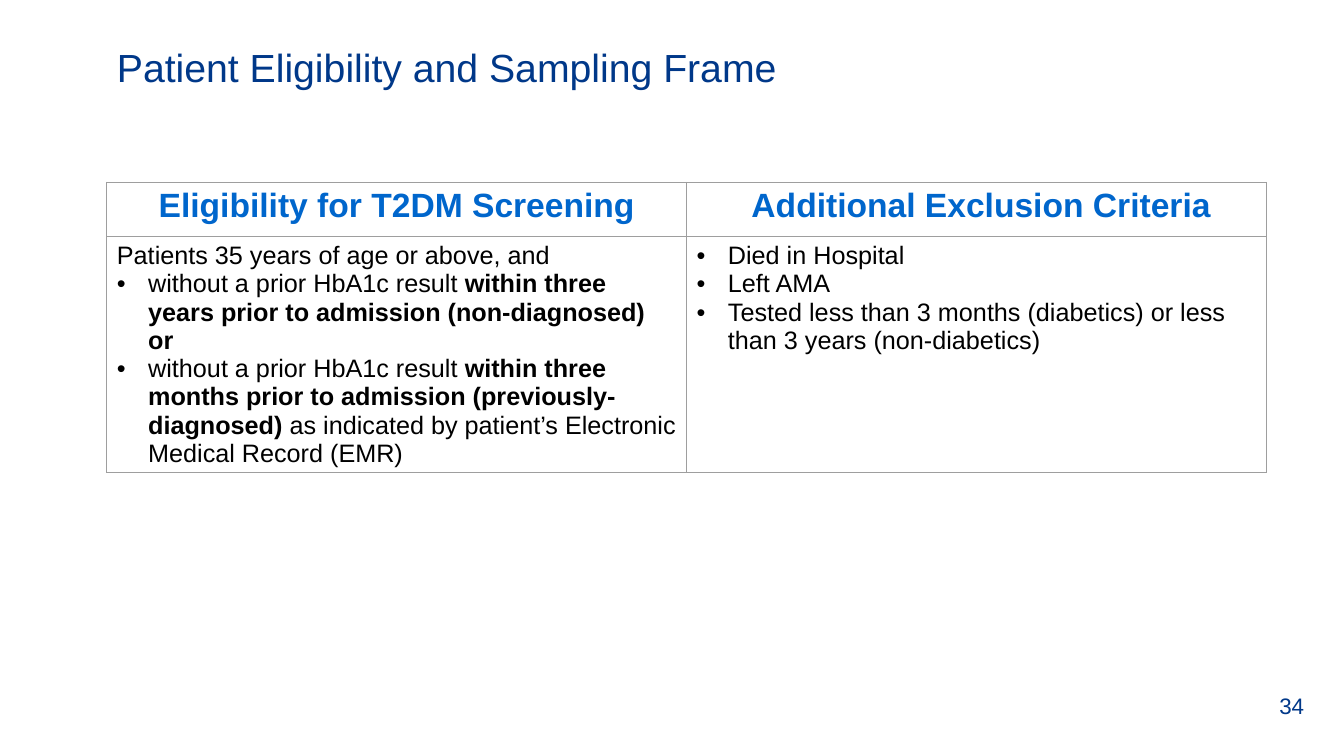
from dataclasses import dataclass

from lxml import etree
from pptx import Presentation
from pptx.dml.color import RGBColor
from pptx.enum import text as t
from pptx.oxml import ns
from pptx.util import Inches, Pt


@dataclass(frozen=True)
class Theme:
    font: str = "Arial"
    navy: str = "003889"
    blue: str = "0066CC"
    black: str = "000000"
    border: str = "9E9E9E"
    title: int = 28
    header: int = 24
    body: int = 18
    number: int = 16


theme = Theme()


def write(frame, paragraphs, *, size, color, align=t.PP_ALIGN.LEFT,
          anchor=t.MSO_ANCHOR.TOP):
    """Each paragraph is (bulleted, [(words, bold), ...])."""
    frame.word_wrap = True
    frame.vertical_anchor = anchor
    for index, (bulleted, runs) in enumerate(paragraphs):
        paragraph = frame.paragraphs[0] if index == 0 else frame.add_paragraph()
        paragraph.alignment = align
        if bulleted:
            paragraph.level = 1
            props = paragraph._p.get_or_add_pPr()
            props.set("marL", str(Inches(0.31)))
            props.set("indent", str(-Inches(0.31)))
            etree.SubElement(props, ns.qn("a:buFont"), typeface=theme.font)
            etree.SubElement(props, ns.qn("a:buChar"), char="•")
        for words, bold in runs:
            run = paragraph.add_run()
            run.text = words
            run.font.name = theme.font
            run.font.size = Pt(size)
            run.font.bold = bold
            run.font.color.rgb = RGBColor.from_string(color)


def outline(cell):
    props = cell._tc.get_or_add_tcPr()
    for side in ("lnL", "lnR", "lnT", "lnB"):
        line = etree.SubElement(props, ns.qn(f"a:{side}"), w=str(Pt(0.75)))
        fill = etree.SubElement(line, ns.qn("a:solidFill"))
        etree.SubElement(fill, ns.qn("a:srgbClr"), val=theme.border)


presentation = Presentation()
presentation.slide_width = Inches(13.33)
presentation.slide_height = Inches(7.5)
slide = presentation.slides.add_slide(presentation.slide_layouts[5])
left, width = Inches(1.06), Inches(11.5)

# Title
title = slide.shapes.title
title.left, title.top, title.width, title.height = left, Inches(0.38), width, Inches(0.96)
title.text_frame.auto_size = t.MSO_AUTO_SIZE.NONE
write(title.text_frame, [(False, [("Patient Eligibility and Sampling Frame", False)])],
      size=theme.title, color=theme.navy)

# Criteria table
headers = [
    [("Eligibility for T2DM Screening", True)],
    [(" ", False), ("Additional Exclusion Criteria", True)],
]
eligibility = [
    (False, [("Patients 35 years of age or above, and", False)]),
    (True, [("without a prior HbA1c result ", False),
            ("within three years prior to admission (non-diagnosed) or", True)]),
    (True, [("without a prior HbA1c result ", False),
            ("within three months prior to admission (previously-diagnosed) ", True),
            ("as indicated by patient’s Electronic Medical Record (EMR)", False)]),
]
exclusions = [(True, [(words, False)]) for words in (
    "Died in Hospital",
    "Left AMA",
    "Tested less than 3 months (diabetics) or less than 3 years (non-diabetics)",
)]

criteria = slide.shapes.add_table(2, 2, left, Inches(1.81), width, Inches(2.88)).table
criteria.horz_banding = False
criteria.first_row = False
criteria.rows[0].height = Inches(0.54)
criteria.rows[1].height = Inches(2.34)
for column, (header, details) in enumerate(zip(headers, (eligibility, exclusions))):
    heading, body = criteria.cell(0, column), criteria.cell(1, column)
    for cell in (heading, body):
        outline(cell)
        cell.fill.background()
    write(heading.text_frame, [(False, header)], size=theme.header, color=theme.blue,
          align=t.PP_ALIGN.CENTER)
    write(body.text_frame, details, size=theme.body, color=theme.black)

# Slide number
number = slide.shapes.add_textbox(Inches(12.59), Inches(6.8), Inches(0.63), Inches(0.4))
write(number.text_frame, [(False, [("34", False)])], size=theme.number,
      color=theme.navy, anchor=t.MSO_ANCHOR.MIDDLE)

presentation.save("out.pptx")
